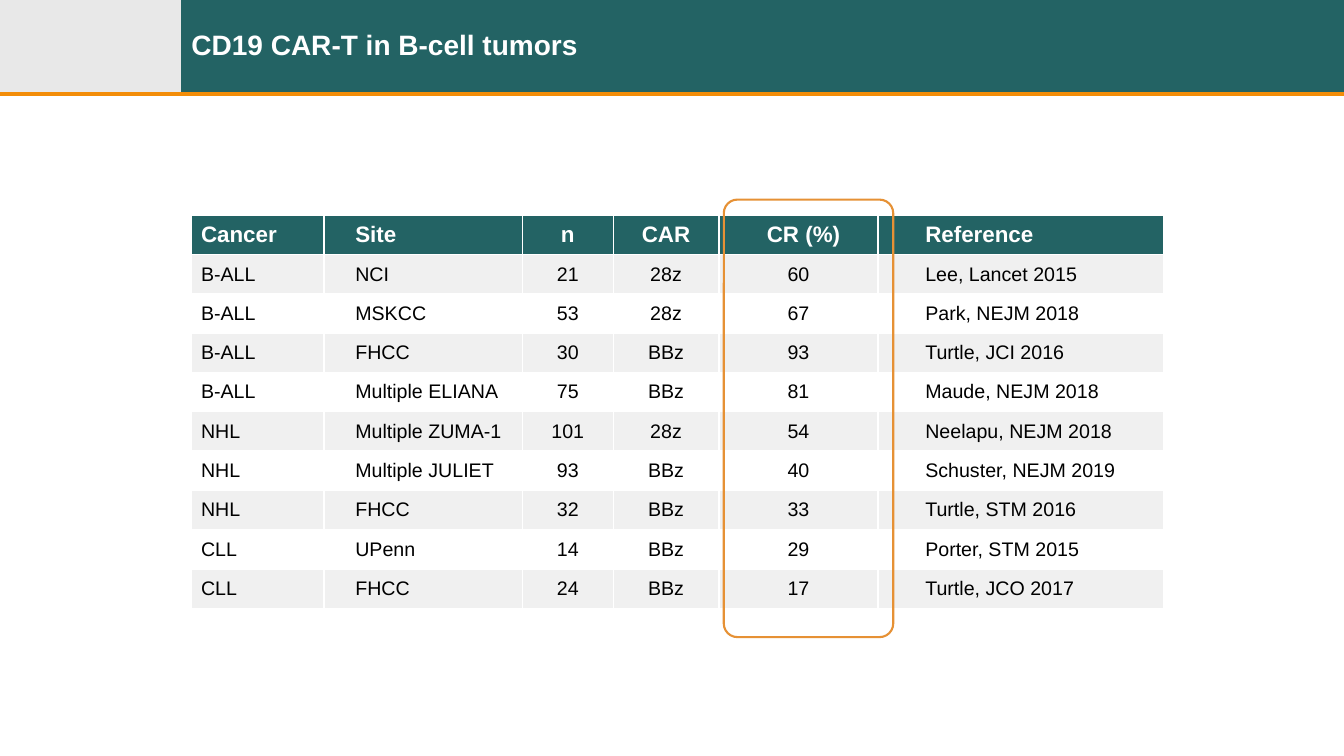
import pptx
import pptx.util
import pptx.dml.color
import pptx.enum.shapes
import pptx.enum.text
import pptx.oxml.ns
from lxml import etree

Pt = pptx.util.Pt
SHAPE = pptx.enum.shapes.MSO_SHAPE
ALIGN = pptx.enum.text.PP_ALIGN
MIDDLE = pptx.enum.text.MSO_ANCHOR.MIDDLE

# Content
TITLE = "CD19 CAR-T in B-cell tumors"
HEADINGS = ("Cancer", "Site", "n", "CAR", "CR (%)", "Reference")
TRIALS = [
    ("B-ALL", "NCI", "21", "28z", "60", "Lee, Lancet 2015"),
    ("B-ALL", "MSKCC", "53", "28z", "67", "Park, NEJM 2018"),
    ("B-ALL", "FHCC", "30", "BBz", "93", "Turtle, JCI 2016"),
    ("B-ALL", "Multiple ELIANA", "75", "BBz", "81", "Maude, NEJM 2018"),
    ("NHL", "Multiple ZUMA-1", "101", "28z", "54", "Neelapu, NEJM 2018"),
    ("NHL", "Multiple JULIET", "93", "BBz", "40", "Schuster, NEJM 2019"),
    ("NHL", "FHCC", "32", "BBz", "33", "Turtle, STM 2016"),
    ("CLL", "UPenn", "14", "BBz", "29", "Porter, STM 2015"),
    ("CLL", "FHCC", "24", "BBz", "17", "Turtle, JCO 2017"),
]

# Column layout: width, left inset, alignment
COLUMNS = [
    (95, 7.2, ALIGN.LEFT),
    (141.8, 22.4, ALIGN.LEFT),
    (64.8, 7.2, ALIGN.CENTER),
    (75.6, 7.2, ALIGN.CENTER),
    (113.6, 7.2, ALIGN.CENTER),
    (204.2, 33.8, ALIGN.LEFT),
]
CR_COLUMN, CR_HEADING_INSET = 4, 14.4
TABLE_LEFT, TABLE_TOP, ROW_HEIGHT = 136.4, 153.8, 28.08
SLIDE_WIDTH, SLIDE_HEIGHT = 960, 540
BAND_HEIGHT, BAND_LEFT = 66, 129.5

COLORS = {
    "teal": "236364", "corner": "222222", "rule": "F38D08", "highlight": "E69135",
    "stripe": "F0F0F0", "white": "FFFFFF", "black": "000000",
}


def rgb(name):
    return pptx.dml.color.RGBColor.from_string(COLORS[name])


def paint(fill, name):
    fill.solid()
    fill.fore_color.rgb = rgb(name)


def style(paragraph, size, color, bold):
    for run in paragraph.runs:
        run.font.name = "Arial"
        run.font.size = Pt(size)
        run.font.bold = bold
        run.font.color.rgb = rgb(color)


def add_block(slide, kind, left, top, width, height):
    block = slide.shapes.add_shape(kind, Pt(left), Pt(top), Pt(width), Pt(height))
    block.shadow.inherit = False
    return block


def add_header(slide):
    # Pale corner and teal band
    for left, width, color in ((0, BAND_LEFT, "corner"),
                               (BAND_LEFT, SLIDE_WIDTH - BAND_LEFT, "teal")):
        block = add_block(slide, SHAPE.RECTANGLE, left, 0, width, BAND_HEIGHT)
        paint(block.fill, color)
        block.line.fill.background()
        if color == "corner":
            tint = next(block.element.spPr.iter(pptx.oxml.ns.qn("a:srgbClr")))
            etree.SubElement(tint, pptx.oxml.ns.qn("a:alpha"), val="10000")

    # Orange rule
    rule = slide.shapes.add_connector(pptx.enum.shapes.MSO_CONNECTOR.STRAIGHT,
                                      0, Pt(67), Pt(SLIDE_WIDTH), Pt(67))
    rule.line.color.rgb = rgb("rule")
    rule.line.width = Pt(3)
    etree.SubElement(rule.element.spPr, pptx.oxml.ns.qn("a:effectLst"))

    # Title, brought in front of the band
    title = slide.shapes.title
    title.left, title.top = Pt(BAND_LEFT), Pt(0)
    title.width, title.height = Pt(828), Pt(BAND_HEIGHT)
    title.text_frame.text = TITLE
    title.text_frame.vertical_anchor = MIDDLE
    heading = title.text_frame.paragraphs[0]
    heading.alignment = ALIGN.LEFT
    heading.line_spacing = 0.9
    style(heading, 20, "white", True)
    slide.shapes.element.append(title.element)


def add_trials(slide):
    rows = [HEADINGS] + TRIALS
    trials = slide.shapes.add_table(
        len(rows), len(COLUMNS), Pt(TABLE_LEFT), Pt(TABLE_TOP),
        Pt(sum(width for width, _, _ in COLUMNS)), Pt(ROW_HEIGHT * len(rows))).table
    for column, (width, _, _) in zip(trials.columns, COLUMNS):
        column.width = Pt(width)
    for r, values in enumerate(rows):
        trials.rows[r].height = Pt(ROW_HEIGHT)
        is_heading = r == 0
        background = "teal" if is_heading else "stripe" if r % 2 else "white"
        for c, (value, (_, inset, alignment)) in enumerate(zip(values, COLUMNS)):
            cell = trials.cell(r, c)
            paint(cell.fill, background)
            cell.vertical_anchor = MIDDLE
            cell.margin_left = Pt(CR_HEADING_INSET if is_heading and c == CR_COLUMN else inset)
            cell.text_frame.text = value
            entry = cell.text_frame.paragraphs[0]
            entry.alignment = alignment
            style(entry, 16 if is_heading else 14, "white" if is_heading else "black", is_heading)


def add_highlight(slide):
    # Frame around the response column
    frame = add_block(slide, SHAPE.ROUNDED_RECTANGLE, 517, 142.6, 121, 312.5)
    frame.adjustments[0] = 0.08
    frame.fill.background()
    frame.line.color.rgb = rgb("highlight")
    frame.line.width = Pt(1.5)


def main():
    deck = pptx.Presentation()
    deck.slide_width, deck.slide_height = Pt(SLIDE_WIDTH), Pt(SLIDE_HEIGHT)
    slide = deck.slides.add_slide(deck.slide_layouts[5])
    add_header(slide)
    add_trials(slide)
    add_highlight(slide)
    deck.save("out.pptx")


if __name__ == "__main__":
    main()
